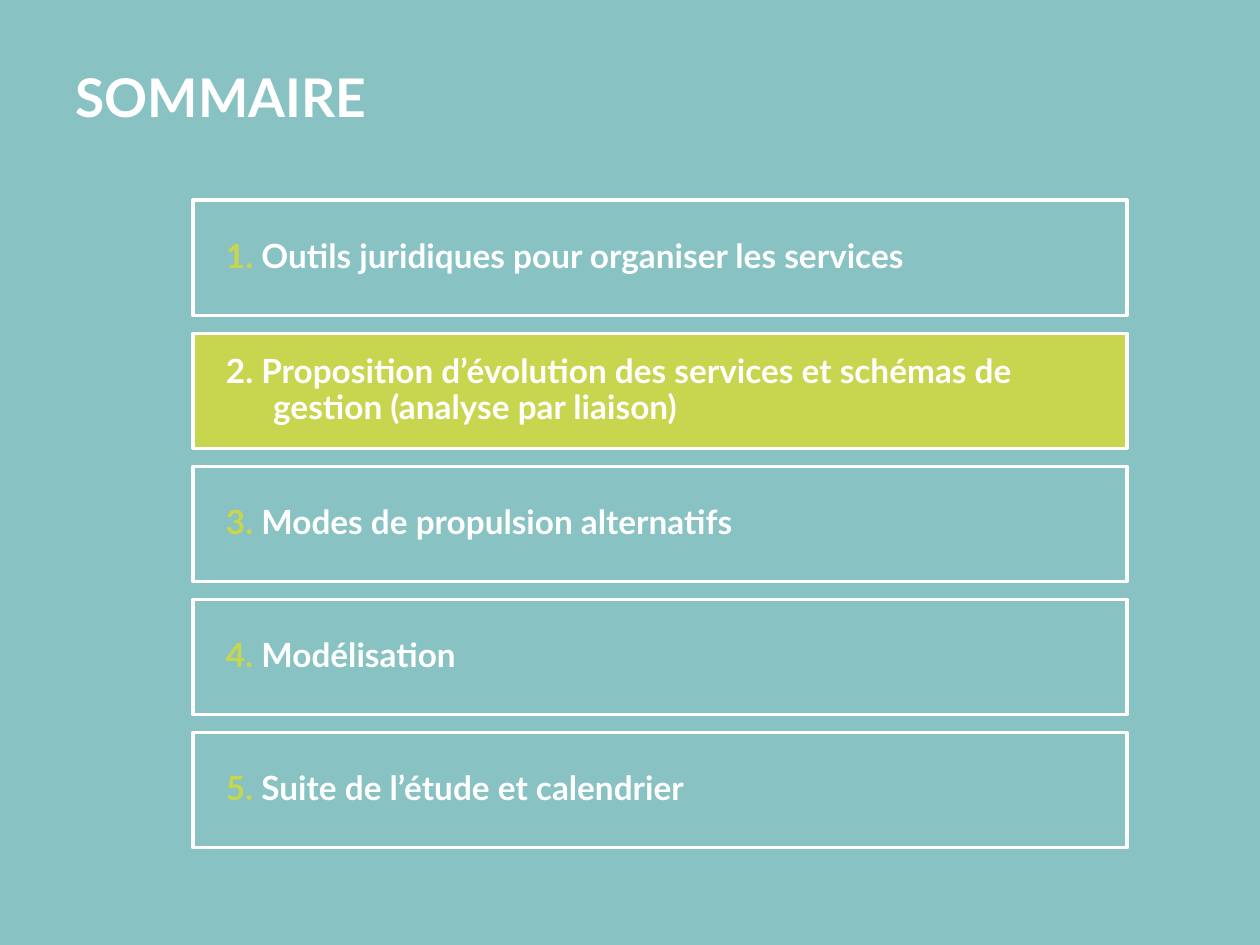
from pptx import Presentation, util as u
from pptx.dml import color
from pptx.enum import shapes, text

TEAL, LIME, WHITE = "88C2C3", "C8D54F", "FFFFFF"
ITEMS = [
    "Outils juridiques pour organiser les services",
    "Proposition d’évolution des services et schémas de gestion (analyse par liaison)",
    "Modes de propulsion alternatifs",
    "Modélisation",
    "Suite de l’étude et calendrier",
]
ACTIVE = 2


def paint(target, tone):
    if hasattr(target, "solid"):
        target.solid()
        target = target.fore_color
    target.rgb = color.RGBColor.from_string(tone)


def write(para, words, size, tone):
    run = para.add_run()
    run.text = words
    run.font.name = "Lato"
    run.font.size = u.Pt(size)
    run.font.bold = True
    paint(run.font.fill, tone)


def title(slide, left, top, width, height):
    box = slide.shapes.add_textbox(u.Cm(left), u.Cm(top), u.Cm(width), u.Cm(height))
    box.text_frame.word_wrap = True
    write(box.text_frame.paragraphs[0], "SOMMAIRE", 32, WHITE)


def entry(slide, num, words, left, top, width, height):
    box = slide.shapes.add_shape(
        shapes.MSO_SHAPE.RECTANGLE, u.Cm(left), u.Cm(top), u.Cm(width), u.Cm(height))
    box.shadow.inherit = False
    paint(box.line.fill, WHITE)
    box.line.width = u.Pt(2)
    if num == ACTIVE:
        paint(box.fill, LIME)
    else:
        box.fill.background()

    frame = box.text_frame
    frame.word_wrap = True
    frame.vertical_anchor = text.MSO_ANCHOR.MIDDLE
    frame.margin_left = frame.margin_right = u.Cm(0.2)
    frame.margin_top = frame.margin_bottom = u.Cm(0.2)
    para = frame.paragraphs[0]
    para.alignment = text.PP_ALIGN.LEFT
    para.line_spacing = 0.9
    para.space_after = u.Pt(4)
    props = para._p.get_or_add_pPr()
    props.set("marL", str(u.Cm(1.5)))
    props.set("indent", str(u.Cm(-1)))
    write(para, f"{num}. ", 20, WHITE if num == ACTIVE else LIME)
    write(para, words, 20, WHITE)


def agenda(slide, left, top, width, height):
    gap = 0.38
    tall = (height - gap * (len(ITEMS) - 1)) / len(ITEMS)
    for i, words in enumerate(ITEMS):
        entry(slide, i + 1, words, left, top + i * (tall + gap), width, tall)


def main():
    deck = Presentation()
    deck.slide_width, deck.slide_height = u.Cm(26.7), u.Cm(20.02)
    slide = deck.slides.add_slide(deck.slide_layouts[6])
    paint(slide.background.fill, TEAL)
    title(slide, 1.35, 1.24, 24.97, 1.8)
    agenda(slide, 4.09, 4.24, 19.79, 13.72)
    deck.save("out.pptx")


if __name__ == "__main__":
    main()
